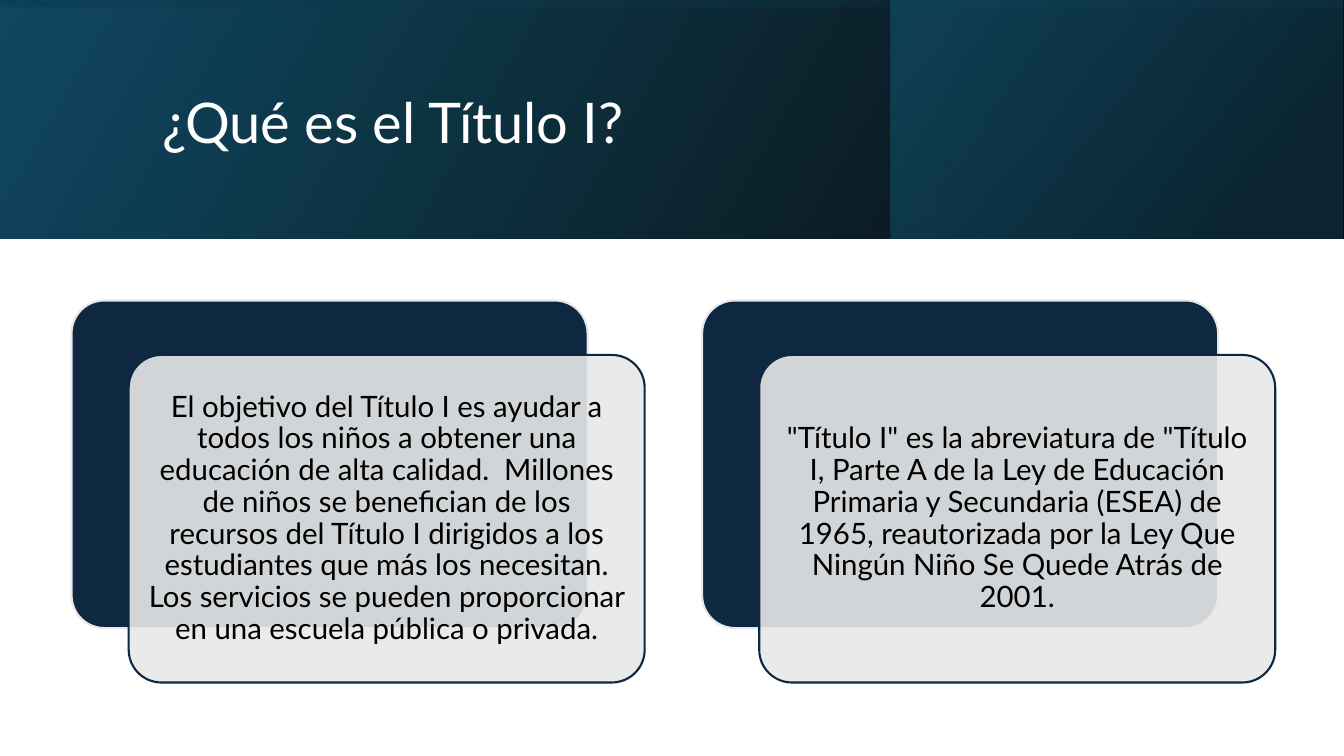
from dataclasses import dataclass

from lxml import etree
from pptx import Presentation
from pptx.dml.color import RGBColor
from pptx.enum.shapes import MSO_SHAPE
from pptx.enum.text import MSO_ANCHOR, MSO_AUTO_SIZE, PP_ALIGN
from pptx.oxml.ns import qn
from pptx.shapes.autoshape import Shape
from pptx.slide import Slide
from pptx.util import Pt

RECTANGLE = MSO_SHAPE.RECTANGLE
ROUNDED = MSO_SHAPE.ROUNDED_RECTANGLE
MIDDLE = MSO_ANCHOR.MIDDLE
LEFT, CENTER = PP_ALIGN.LEFT, PP_ALIGN.CENTER
NO_AUTOFIT = MSO_AUTO_SIZE.NONE

COLORS = {
    "black": "000000",
    "white": "FFFFFF",
    "navy": "0E2841",
    "pale": "E8E8E8",
    "ocean": "104862",
    "deep": "0B3041",
    "teal": "156082",
}
FONT = "Lato"
SLIDE_W, SLIDE_H = 960, 540
HEADER_H = 170.6

CARD_W, CARD_H = 368.6, 234
CARD_LEFT, CARD_TOP = 51.1, 214.6
CARD_PITCH = 450.4
CARD_SHIFT_X, CARD_SHIFT_Y = 40.8, 38.9
CARD_INSET = 6.7


@dataclass(frozen=True)
class Stop:
    position: float
    color: str
    opacity: int


@dataclass(frozen=True)
class Band:
    left: float
    top: float
    width: float
    height: float
    stops: tuple[Stop, Stop]
    angle: float
    rotation: float = 0


BANDS = (
    Band(0, 0, SLIDE_W, HEADER_H,
         (Stop(0, "black", 96), Stop(1, "ocean", 100)), 30),
    Band(636.5, 0, 322.6, HEADER_H,
         (Stop(0.19, "deep", 68), Stop(1, "teal", 48)), 40),
    Band((SLIDE_W - HEADER_H) / 2, (HEADER_H - SLIDE_W) / 2, HEADER_H, SLIDE_W,
         (Stop(0.23, "ocean", 16), Stop(0.99, "black", 45)), 10, 270),
)
TITLE = "¿Qué es el Título I?"
CARD_TEXTS = (
    "El objetivo del Título I es ayudar a todos los niños a obtener una "
    "educación de alta calidad.  Millones de niños se benefician de los "
    "recursos del Título I dirigidos a los estudiantes que más los necesitan. "
    "Los servicios se pueden proporcionar en una escuela pública o privada.",
    '"Título I" es la abreviatura de "Título I, Parte A de la Ley de Educación '
    "Primaria y Secundaria (ESEA) de 1965, reautorizada por la Ley Que Ningún "
    'Niño Se Quede Atrás de 2001.',
)


def rgb(name: str) -> RGBColor:
    return RGBColor.from_string(COLORS[name])


def set_fill_opacity(shape: Shape, *percentages: int) -> None:
    """Give the fill colours, in order, their opacity; call before adding a line."""
    fill_colors = list(shape._element.spPr.iter(qn("a:srgbClr")))
    for color, percentage in zip(fill_colors, percentages):
        etree.SubElement(color, qn("a:alpha"), val=str(percentage * 1000))


def write(shape: Shape, text: str, size: float, color: str, align: PP_ALIGN) -> None:
    frame = shape.text_frame
    frame.text = text
    frame.word_wrap = True
    frame.auto_size = NO_AUTOFIT
    frame.vertical_anchor = MIDDLE
    paragraph = frame.paragraphs[0]
    paragraph.alignment = align
    paragraph.line_spacing = 0.9
    paragraph.font.name = FONT
    paragraph.font.size = Pt(size)
    paragraph.font.color.rgb = rgb(color)


def add_band(slide: Slide, band: Band) -> None:
    shape = slide.shapes.add_shape(
        RECTANGLE, Pt(band.left), Pt(band.top), Pt(band.width), Pt(band.height))
    shape.shadow.inherit = False
    shape.rotation = band.rotation
    shape._element.spPr.xfrm.set("flipH", "1")
    shape.line.fill.background()
    shape.fill.gradient()
    shape.fill.gradient_angle = band.angle
    for gradient_stop, stop in zip(shape.fill.gradient_stops, band.stops):
        gradient_stop.position = stop.position
        gradient_stop.color.rgb = rgb(stop.color)
    set_fill_opacity(shape, *(stop.opacity for stop in band.stops))


def add_title(slide: Slide) -> None:
    title = slide.shapes.title
    title.left, title.top = Pt(108.7), Pt(27.4)
    title.width, title.height = Pt(765.4), Pt(123.8)
    write(title, TITLE, 40, "white", LEFT)
    # Lift the title above the header bands
    title._element.getparent().append(title._element)


def add_panel(slide: Slide, left: float, top: float,
              fill: str, line: str, opacity: int = 100) -> Shape:
    panel = slide.shapes.add_shape(
        ROUNDED, Pt(left), Pt(top), Pt(CARD_W), Pt(CARD_H))
    panel.adjustments[0] = 0.1
    panel.shadow.inherit = False
    panel.fill.solid()
    panel.fill.fore_color.rgb = rgb(fill)
    if opacity < 100:
        set_fill_opacity(panel, opacity)
    panel.line.color.rgb = rgb(line)
    panel.line.width = Pt(1.5)
    return panel


def add_card(slide: Slide, left: float, text: str) -> None:
    add_panel(slide, left, CARD_TOP, "navy", "pale")
    front = add_panel(slide, left + CARD_SHIFT_X, CARD_TOP + CARD_SHIFT_Y,
                      "pale", "navy", opacity=90)
    write(front, text, 21, "black", CENTER)
    frame = front.text_frame
    frame.margin_left = frame.margin_right = Pt(CARD_INSET)
    frame.margin_top = frame.margin_bottom = Pt(CARD_INSET)


def main() -> None:
    presentation = Presentation()
    presentation.slide_width, presentation.slide_height = Pt(SLIDE_W), Pt(SLIDE_H)
    title_only = presentation.slide_layouts[5]
    slide = presentation.slides.add_slide(title_only)
    for band in BANDS:
        add_band(slide, band)
    add_title(slide)
    for index, text in enumerate(CARD_TEXTS):
        add_card(slide, CARD_LEFT + index * CARD_PITCH, text)
    presentation.save("out.pptx")


if __name__ == "__main__":
    main()
